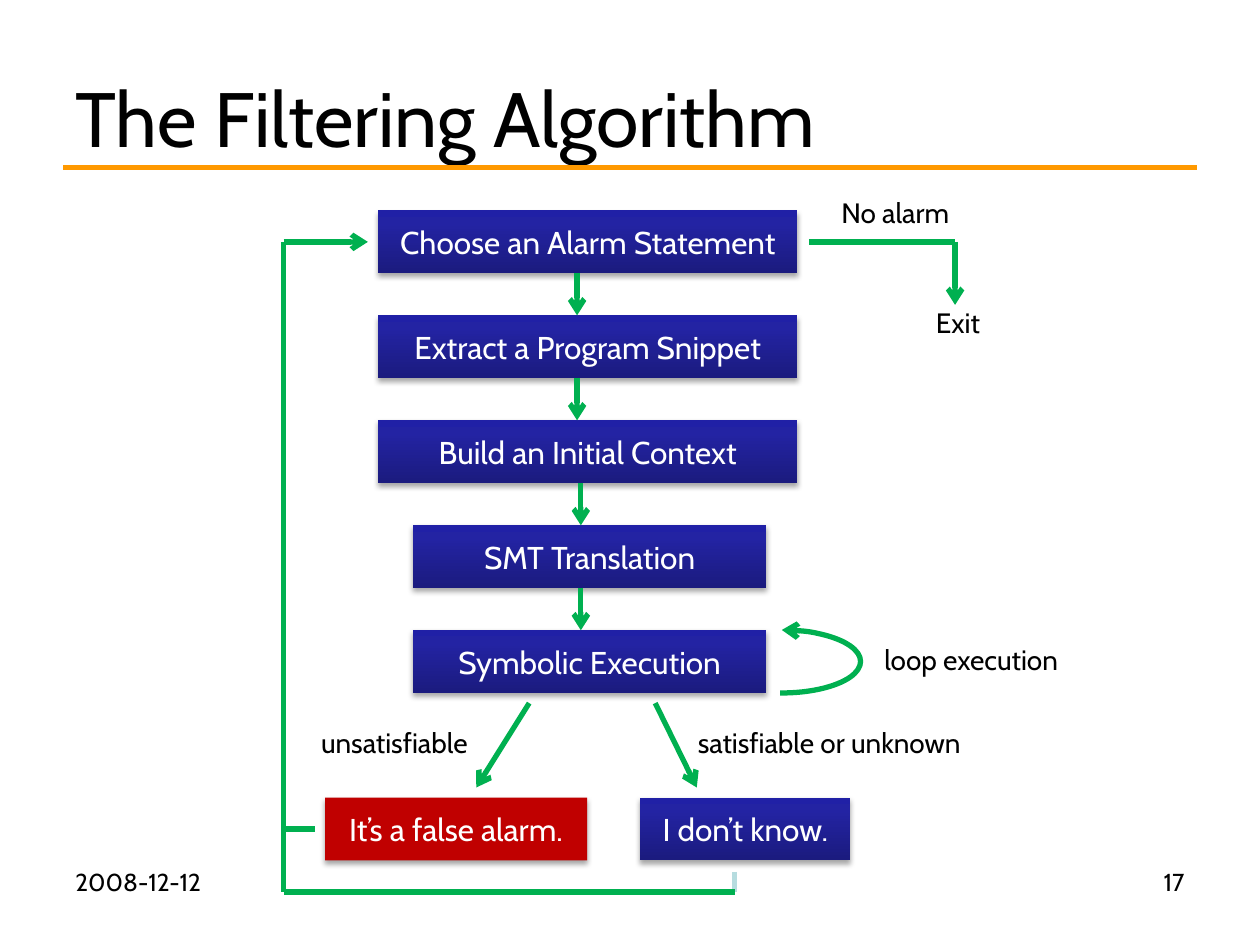
from lxml.etree import SubElement
from pptx import Presentation
from pptx.dml.color import RGBColor
from pptx.enum.shapes import MSO_CONNECTOR, MSO_SHAPE
from pptx.enum.text import MSO_ANCHOR, PP_ALIGN
from pptx.oxml import parse_xml
from pptx.oxml.ns import nsdecls, qn
from pptx.util import Inches, Pt

FONT = "Cabin"
BLACK, WHITE, GREEN, ORANGE, RED, PALE = (
    "000000", "FFFFFF", "00B050", "FF9900", "C00000", "B6DCDF")
BLUE_STOPS = [(0, "1B1B7E"), (80, "2323A3"), (100, "2020A6")]

STEP_TOP, STEP_PITCH, BOX_HEIGHT = 1.67, 0.833, 0.5
# text, left, width
STEPS = [
    ("Choose an Alarm Statement", 3, 3.33),
    ("Extract a Program Snippet", 3, 3.33),
    ("Build an Initial Context", 3, 3.33),
    ("SMT Translation", 3.28, 2.8),
    ("Symbolic Execution", 3.28, 2.8),
]
STEP_ARROWS_X = [4.58, 4.58, 4.61, 4.61]
RESULT_TOP = 6.33
# text, left, width, plain fill or None for the blue gradient
RESULTS = [("It’s a false alarm.", 2.58, 2.08, RED),
           ("I don’t know.", 5.08, 1.67, None)]

# text, left, top, width
LABELS = [
    ("unsatisfiable", 2.45, 5.71, 1.43),
    ("satisfiable or unknown", 5.44, 5.71, 2.42),
    ("loop execution", 6.92, 5.05, 1.64),
    ("No alarm", 6.58, 1.5, 1.1),
    ("Exit", 7.33, 2.38, 0.57),
]

# start, end, colour, arrowhead at the end
LINES = [
    ((0.5, 1.33), (9.5, 1.33), ORANGE, False),
    ((4.2, 5.58), (3.78, 6.25), GREEN, True),
    ((5.2, 5.58), (5.53, 6.25), GREEN, True),
    ((2.25, 1.92), (2.92, 1.92), GREEN, True),
    ((2.25, 1.92), (2.25, 7.08), GREEN, False),
    ((2.25, 6.58), (2.5, 6.58), GREEN, False),
    ((5.83, 6.92), (5.83, 7.08), PALE, False),
    ((2.25, 7.08), (5.83, 7.08), GREEN, False),
    ((6.42, 1.92), (7.58, 1.92), GREEN, False),
    ((7.58, 1.92), (7.58, 2.42), GREEN, True),
]


def rgb(value):
    return RGBColor.from_string(value)


def write(shape, text, size, color, align=PP_ALIGN.LEFT, anchor=MSO_ANCHOR.TOP, wrap=True):
    frame = shape.text_frame
    frame.word_wrap = wrap
    frame.vertical_anchor = anchor
    paragraph = frame.paragraphs[0]
    paragraph.alignment = align
    run = paragraph.add_run()
    run.text = text
    run.font.name = FONT
    run.font.size = Pt(size)
    run.font.color.rgb = rgb(color)


def add_text(slide, text, left, top, width, height, size, **options):
    box = slide.shapes.add_textbox(*map(Inches, (left, top, width, height)))
    write(box, text, size, BLACK, **options)


def fill_blue_gradient(shape):
    stops = "".join(
        f'<a:gs pos="{position * 1000}"><a:srgbClr val="{color}"/></a:gs>'
        for position, color in BLUE_STOPS)
    gradient = parse_xml(
        f'<a:gradFill {nsdecls("a")} rotWithShape="1"><a:gsLst>{stops}</a:gsLst>'
        '<a:lin ang="16200000" scaled="0"/></a:gradFill>')
    shape._element.spPr.find(qn("a:prstGeom")).addnext(gradient)


def add_soft_shadow(shape):
    shape.shadow.inherit = False
    effects = shape._element.spPr.find(qn("a:effectLst"))
    effects.append(parse_xml(
        f'<a:outerShdw {nsdecls("a")} blurRad="{Pt(3.1)}" dist="{Pt(1.8)}" '
        'dir="5400000" rotWithShape="0"><a:srgbClr val="000000">'
        '<a:alpha val="35000"/></a:srgbClr></a:outerShdw>'))


def add_box(slide, text, left, top, width, fill=None):
    box = slide.shapes.add_shape(
        MSO_SHAPE.RECTANGLE, *map(Inches, (left, top, width, BOX_HEIGHT)))
    if fill:
        box.fill.solid()
        box.fill.fore_color.rgb = rgb(fill)
    else:
        fill_blue_gradient(box)
    box.line.fill.background()
    add_soft_shadow(box)
    write(box, text, 18, WHITE, PP_ALIGN.CENTER, MSO_ANCHOR.MIDDLE)


def style_line(shape, color, arrow_end=None):
    """Set a 3 pt line; arrow_end is "headEnd", "tailEnd" or None."""
    shape.line.color.rgb = rgb(color)
    shape.line.width = Pt(3)
    if arrow_end:
        SubElement(shape.line._get_or_add_ln(), qn(f"a:{arrow_end}"), type="arrow")


def add_line(slide, start, end, color, arrow):
    line = slide.shapes.add_connector(
        MSO_CONNECTOR.STRAIGHT, *map(Inches, (*start, *end)))
    style_line(line, color, "tailEnd" if arrow else None)
    SubElement(line._element.spPr, qn("a:effectLst"))


def add_loop_arc(slide):
    arc = slide.shapes.add_shape(MSO_SHAPE.ARC, *map(Inches, (5.58, 5, 1.25, 0.5)))
    arc.adjustments[0] = 162
    arc.adjustments[1] = 55.974
    arc.fill.background()
    style_line(arc, GREEN, "headEnd")
    arc.shadow.inherit = False


def main():
    presentation = Presentation()
    presentation.slide_width, presentation.slide_height = Inches(10), Inches(7.5)
    slide = presentation.slides.add_slide(presentation.slide_layouts[6])

    add_text(slide, "The Filtering Algorithm", 0.5, 0.3, 9, 1.25, 44,
             anchor=MSO_ANCHOR.MIDDLE)
    add_text(slide, "2008-12-12", 0.5, 6.83, 2.33, 0.52, 14)
    add_text(slide, "17", 7.17, 6.83, 2.33, 0.52, 14, align=PP_ALIGN.RIGHT)

    tops = [STEP_TOP + index * STEP_PITCH for index in range(len(STEPS))]
    for (text, left, width), top in zip(STEPS, tops):
        add_box(slide, text, left, top, width)
    for text, left, width, fill in RESULTS:
        add_box(slide, text, left, RESULT_TOP, width, fill)

    for x, top, next_top in zip(STEP_ARROWS_X, tops, tops[1:]):
        add_line(slide, (x, top + BOX_HEIGHT), (x, next_top), GREEN, True)
    for line in LINES:
        add_line(slide, *line)
    add_loop_arc(slide)

    for text, left, top, width in LABELS:
        add_text(slide, text, left, top, width, 0.37, 16, wrap=False)

    presentation.save("out.pptx")


if __name__ == "__main__":
    main()
